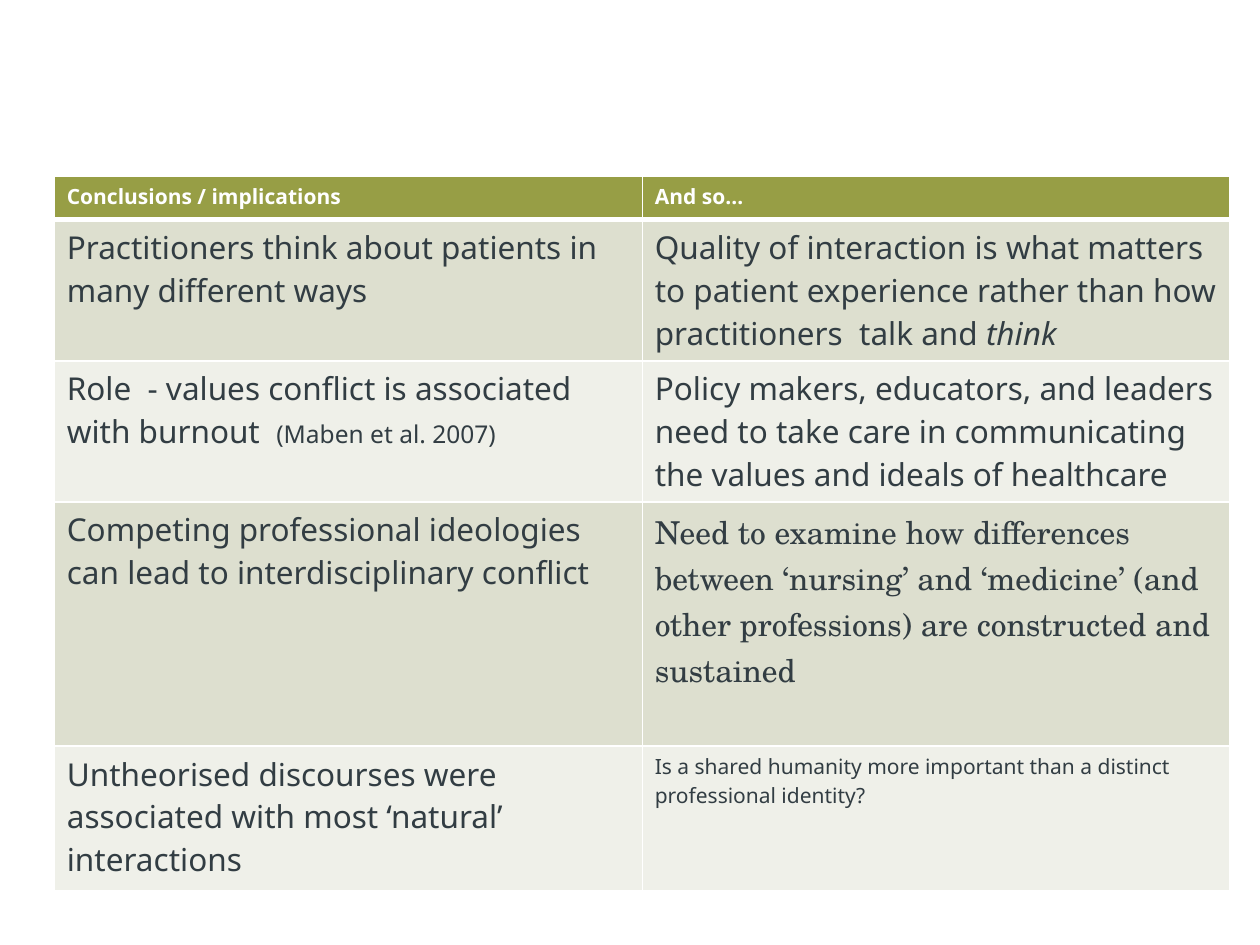
from lxml.etree import SubElement
from pptx import Presentation
from pptx.dml.color import RGBColor as RGB
from pptx.oxml.ns import qn
from pptx.util import Pt

COLORS = {
    "header": "979E45",
    "odd": "DDDFCF",
    "even": "EFF0E9",
    "text": "323D43",
    "white": "FFFFFF",
}
SANS = "Noto Sans"
SERIF = "TeX Gyre Schola"
COL_WIDTH = 336
ROW_HEIGHTS = [25, 80.5, 80.5, 139.5, 82.5]

ROWS = [
    [
        [("Conclusions / implications", {"size": 12})],
        [("And so…", {"size": 12})],
    ],
    [
        [("Practitioners think about patients in many different ways", {})],
        [
            ("Quality of interaction is what matters to patient experience "
             "rather than how practitioners  talk and ", {}),
            ("think", {"italic": True}),
        ],
    ],
    [
        [
            ("Role  - values conflict is associated with burnout  ", {}),
            ("(Maben et al. 2007)", {"size": 14}),
        ],
        [("Policy makers, educators, and leaders need to take care in "
          "communicating the values and ideals of healthcare", {})],
    ],
    [
        [("Competing professional ideologies can lead to "
          "interdisciplinary conflict", {})],
        [("Need to examine how differences between ‘nursing’ and ‘medicine’ "
          "(and other professions) are constructed and sustained",
          {"font": SERIF})],
    ],
    [
        [("Untheorised discourses were associated with most ‘natural’ "
          "interactions", {})],
        [("Is a shared humanity more important than a distinct "
          "professional identity?", {"size": 12})],
    ],
]


def set_borders(cell, widths):
    tc_pr = cell._tc.get_or_add_tcPr()
    for i, (side, width) in enumerate(widths.items()):
        ln = SubElement(tc_pr, qn(f"a:{side}"), w=str(Pt(width)))
        fill = SubElement(ln, qn("a:solidFill"))
        SubElement(fill, qn("a:srgbClr"), val=COLORS["white"])
        tc_pr.insert(i, ln)


def write_runs(p, runs, color, bold):
    for text, style in runs:
        r = p.add_run()
        r.text = text
        r.font.name = style.get("font", SANS)
        r.font.size = Pt(style.get("size", 18))
        r.font.bold = bold
        r.font.italic = style.get("italic", False)
        r.font.color.rgb = RGB.from_string(COLORS[color])


def fill_cell(cell, runs, row):
    header = row == 0
    band = "header" if header else "odd" if row % 2 else "even"
    cell.fill.solid()
    cell.fill.fore_color.rgb = RGB.from_string(COLORS[band])
    set_borders(cell, {
        "lnL": 1,
        "lnR": 1,
        "lnT": 3 if row == 1 else 1,
        "lnB": 3 if header else 1,
    })
    write_runs(cell.text_frame.paragraphs[0], runs,
               "white" if header else "text", header)


def add_conclusions_table(s):
    table = s.shapes.add_table(
        len(ROWS), 2, Pt(31), Pt(100.5),
        Pt(2 * COL_WIDTH), Pt(sum(ROW_HEIGHTS))).table
    for col in table.columns:
        col.width = Pt(COL_WIDTH)
    for i, (height, cells) in enumerate(zip(ROW_HEIGHTS, ROWS)):
        table.rows[i].height = Pt(height)
        for j, runs in enumerate(cells):
            fill_cell(table.cell(i, j), runs, i)


def main():
    prs = Presentation()
    prs.slide_width, prs.slide_height = Pt(720), Pt(540)
    s = prs.slides.add_slide(prs.slide_layouts[6])
    add_conclusions_table(s)
    prs.save("out.pptx")


if __name__ == "__main__":
    main()
